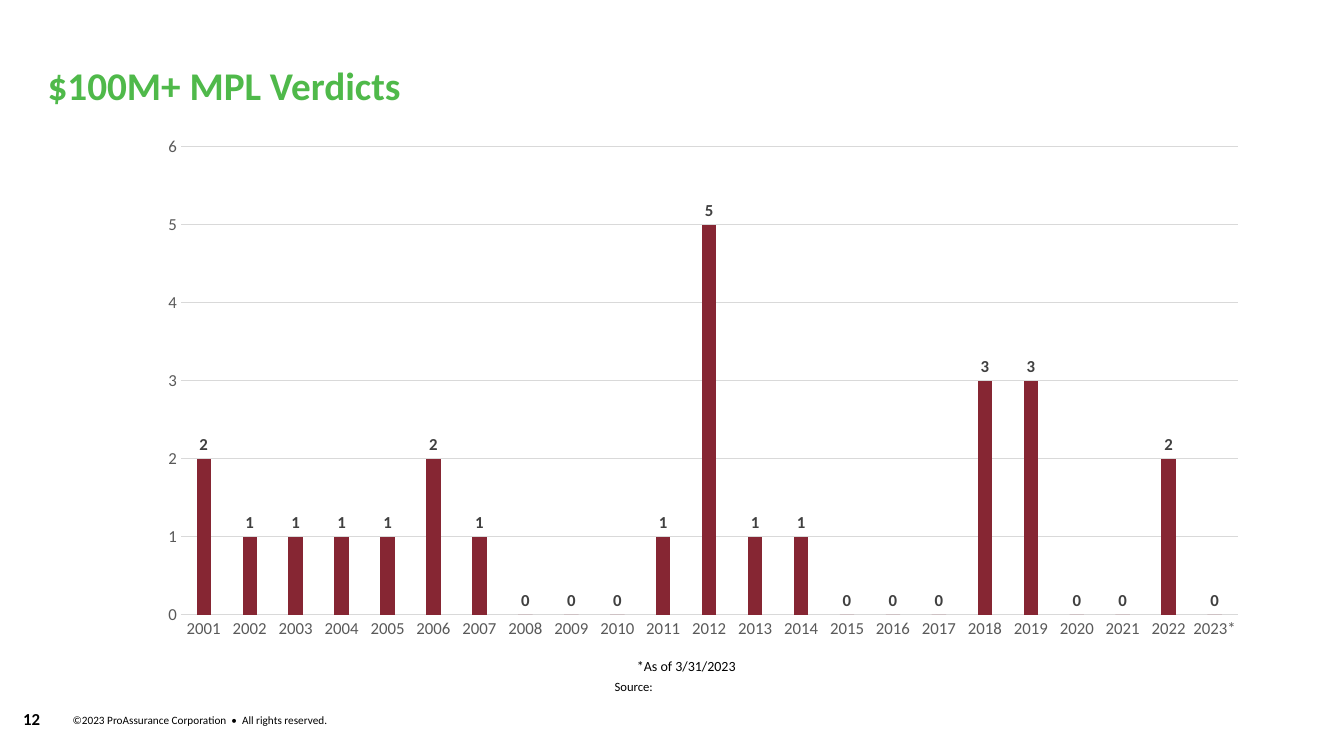
import pptx
import pptx.chart.data
import pptx.dml.color
import pptx.enum.chart
import pptx.enum.text
import pptx.util

COLOURS = {
    "green": "4FB94A",
    "maroon": "862633",
    "black": "000000",
    "label": "404040",
    "axis": "595959",
    "grid": "D9D9D9",
}
VERDICTS = [2, 1, 1, 1, 1, 2, 1, 0, 0, 0, 1, 5, 1, 1, 0, 0, 0, 3, 3, 0, 0, 2, 0]
YEARS = [str(year) for year in range(2001, 2023)] + ["2023*"]
Cm = pptx.util.Cm
Pt = pptx.util.Pt
Align = pptx.enum.text.PP_ALIGN
Anchor = pptx.enum.text.MSO_ANCHOR


def colour(name):
    return pptx.dml.color.RGBColor.from_string(COLOURS[name])


def style_font(font, size, colour_name, bold=False):
    font.name = "Calibri"
    font.size = Pt(size)
    font.bold = bold
    font.color.rgb = colour(colour_name)


def write_text(frame, text, size=10, colour_name="black", bold=False,
               align=Align.LEFT, anchor=Anchor.TOP, insets=(0.25, 0.13),
               line_spacing=None, space_after=None):
    frame.word_wrap = True
    frame.auto_size = pptx.enum.text.MSO_AUTO_SIZE.NONE
    frame.vertical_anchor = anchor
    frame.margin_left = frame.margin_right = Cm(insets[0])
    frame.margin_top = frame.margin_bottom = Cm(insets[1])
    para = frame.paragraphs[0]
    para.alignment = align
    para.line_spacing = line_spacing
    para.space_before = Pt(0)
    para.space_after = space_after
    span = para.add_run()
    span.text = text
    style_font(span.font, size, colour_name, bold)


class VerdictPage:
    def __init__(self, deck):
        self.page = deck.slides.add_slide(deck.slide_layouts[5])

    def title(self, text, left, top, width, height):
        box = self.page.shapes.title
        box.left, box.top, box.width, box.height = map(Cm, (left, top, width, height))
        write_text(box.text_frame, text, size=28, colour_name="green", bold=True,
                   anchor=Anchor.MIDDLE, insets=(0, 0.25), line_spacing=0.9)

    def text(self, text, left, top, width, height, **style):
        box = self.page.shapes.add_textbox(*map(Cm, (left, top, width, height)))
        write_text(box.text_frame, text, **style)

    def column_chart(self, categories, values, left, top, width, height):
        data = pptx.chart.data.CategoryChartData()
        data.categories = categories
        data.add_series("Series 1", values)
        kind = pptx.enum.chart.XL_CHART_TYPE.COLUMN_CLUSTERED
        chart = self.page.shapes.add_chart(
            kind, *map(Cm, (left, top, width, height)), data).chart
        chart.has_legend = False
        chart.has_title = False
        style_font(chart.font, 10, "black")

        for axis in (chart.category_axis, chart.value_axis):
            axis.major_tick_mark = pptx.enum.chart.XL_TICK_MARK.NONE
            axis.minor_tick_mark = pptx.enum.chart.XL_TICK_MARK.NONE
            style_font(axis.tick_labels.font, 12, "axis")
        chart.value_axis.minimum_scale = 0
        chart.value_axis.maximum_scale = 6
        chart.value_axis.major_unit = 1
        chart.value_axis.format.line.fill.background()
        chart.value_axis.has_major_gridlines = True
        for part in (chart.category_axis, chart.value_axis.major_gridlines):
            part.format.line.color.rgb = colour("grid")
            part.format.line.width = Pt(0.75)

        plot = chart.plots[0]
        plot.gap_width = 219
        plot.overlap = -27
        plot.vary_by_categories = False
        bars = plot.series[0]
        bars.format.fill.solid()
        bars.format.fill.fore_color.rgb = colour("maroon")
        labels = bars.data_labels
        labels.show_value = True
        labels.position = pptx.enum.chart.XL_LABEL_POSITION.OUTSIDE_END
        style_font(labels.font, 12, "label", bold=True)


def main():
    deck = pptx.Presentation()
    deck.slide_width = Cm(33.87)
    deck.slide_height = Cm(19.05)
    page = VerdictPage(deck)
    page.title("$100M+ MPL Verdicts", 1.2, 1.22, 30.55, 1.96)
    page.column_chart(YEARS, VERDICTS, 3.68, 3.18, 28.07, 13.18)
    page.text("*As of 3/31/2023", 14.22, 16.44, 6.15, 0.84,
              align=Align.CENTER, insets=(0, 0.13), space_after=Pt(3))
    page.text("Source:", 15.24, 16.97, 1.6, 0.64, size=9)
    page.text("12", 0, 17.73, 1.6, 0.76, size=12, bold=True,
              align=Align.CENTER, anchor=Anchor.MIDDLE)
    page.text("©2023 ProAssurance Corporation  •  All rights reserved.",
              1.83, 17.98, 10.59, 0.33, size=8, anchor=Anchor.MIDDLE, insets=(0, 0))
    deck.save("out.pptx")


if __name__ == "__main__":
    main()
